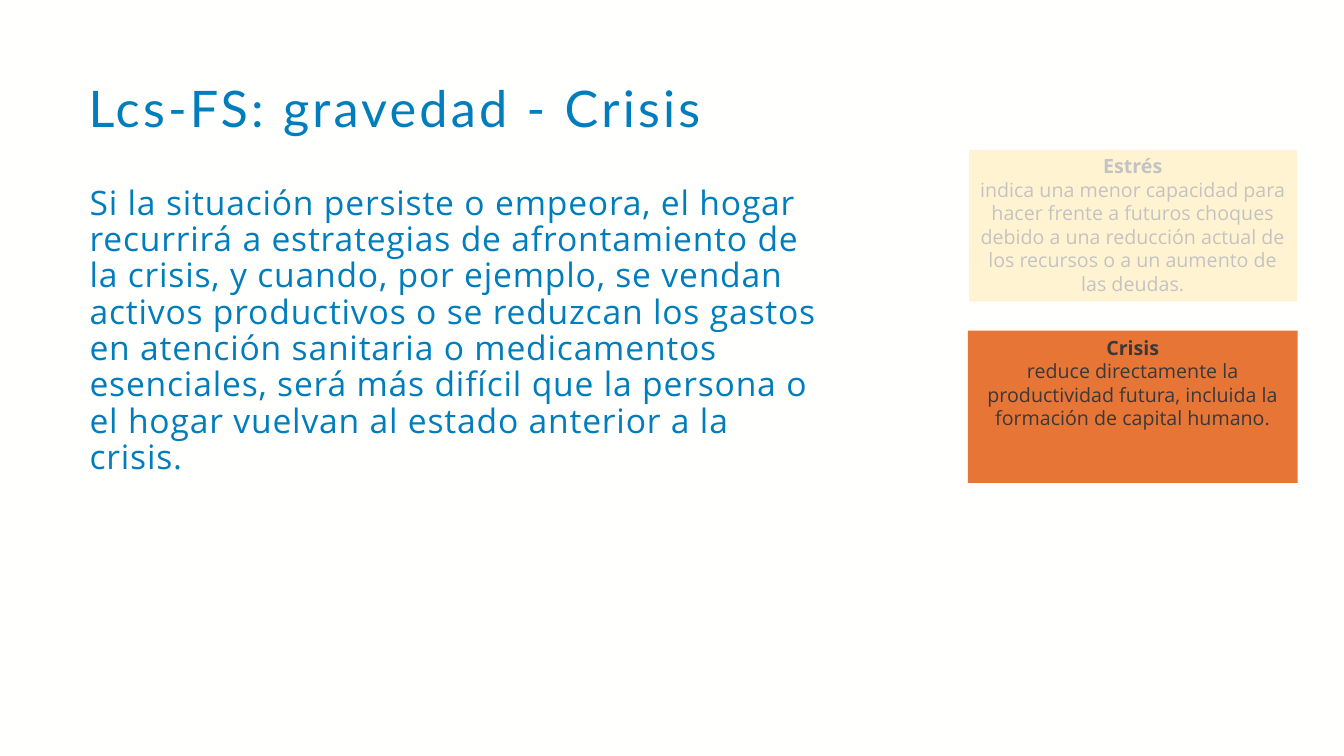
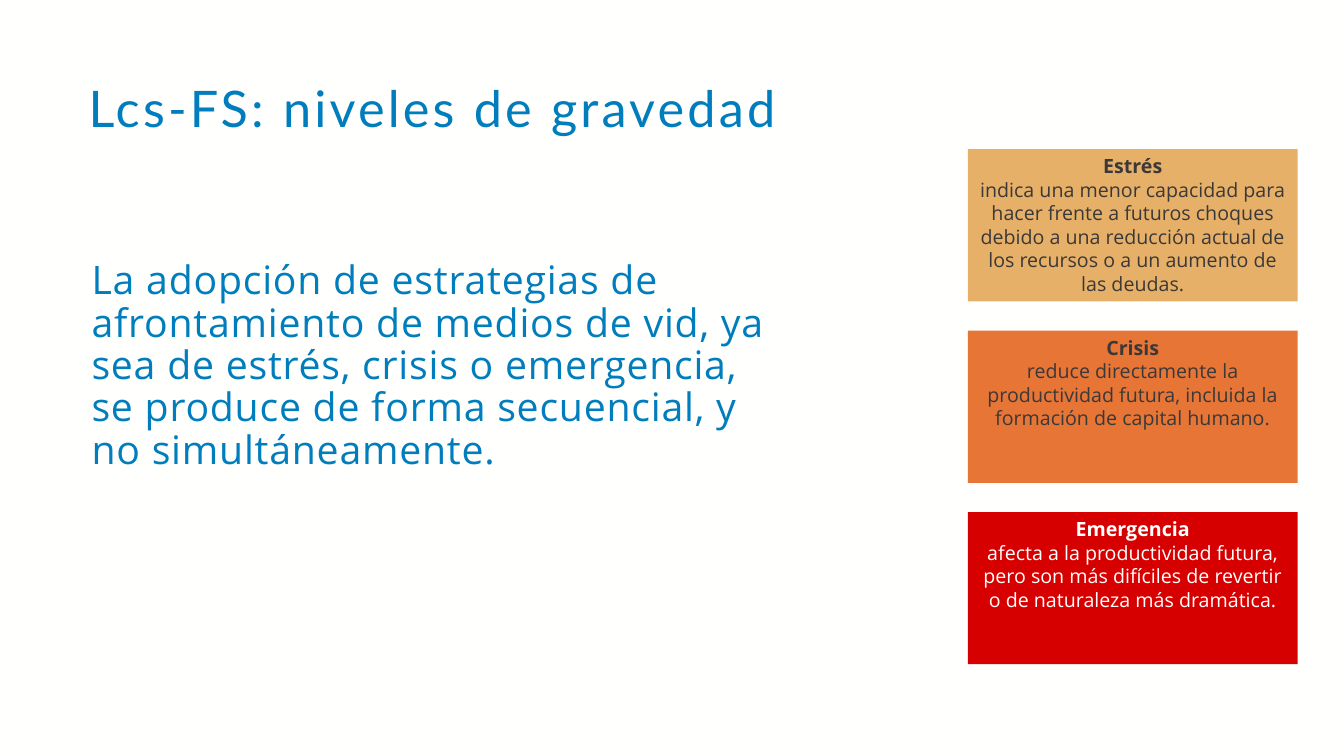
"""Build two slides on the severity levels of livelihood coping strategies."""
import pptx
import pptx.dml.color
import pptx.enum.shapes
import pptx.enum.text
import pptx.oxml
import pptx.oxml.ns
import pptx.util

Inches = pptx.util.Inches
Pt = pptx.util.Pt
RECTANGLE = pptx.enum.shapes.MSO_SHAPE.RECTANGLE
BLUE, DARK, WHITE, PAPER = "007DBC", "3B3838", "FFFFFF", "FFFFFE"
CARD_LEFT, CARD_TOP, CARD_WIDTH, CARD_HEIGHT, CARD_PITCH = 9.6, 1.48, 3.27, 1.51, 1.8

STRESS = ("Estrés", "indica una menor capacidad para hacer frente a futuros choques debido a una "
          "reducción actual de los recursos o a un aumento de las deudas.")
CRISIS = ("Crisis", "reduce directamente la productividad futura, incluida la formación de "
          "capital humano.")
EMERGENCY = ("Emergencia", "afecta a la productividad futura, pero son más difíciles de revertir "
             "o de naturaleza más dramática.")

SLIDES = [
    {"title": "Lcs-FS: gravedad - Crisis",
     "body": "Si la situación persiste o empeora, el hogar recurrirá a estrategias de "
             "afrontamiento de la crisis, y cuando, por ejemplo, se vendan activos productivos o "
             "se reduzcan los gastos en atención sanitaria o medicamentos esenciales, será más "
             "difícil que la persona o el hogar vuelvan al estado anterior a la crisis.",
     "body_box": (0.79, 1.8, 7.44, 4.27), "body_size": 24,
     "cards": [(STRESS, "FFD966", DARK), (CRISIS, "E67536", DARK)], "veil": True},
    {"title": "Lcs-FS: niveles de gravedad",
     "body": "La adopción de estrategias de afrontamiento de medios de vid, ya sea de estrés, "
             "crisis o emergencia, se produce de forma secuencial, y no simultáneamente.",
     "body_box": (0.81, 2.54, 7, 3.53), "body_size": 28,
     "cards": [(STRESS, "E6B068", DARK), (CRISIS, "E67536", DARK),
               (EMERGENCY, "D70000", WHITE)], "veil": False},
]


def color(value):
    """Turn a hex string into a colour."""
    return pptx.dml.color.RGBColor.from_string(value)


def add_text(slide, text, box, font_name, size, tracking):
    """Add a wrapped blue text box with letter spacing in points."""
    text_frame = slide.shapes.add_textbox(*map(Inches, box)).text_frame
    text_frame.word_wrap = True
    text_frame.text = text
    paragraph = text_frame.paragraphs[0]
    paragraph.line_spacing = 0.9
    font = paragraph.runs[0].font
    font.name, font.size = font_name, Pt(size)
    font.color.rgb = color(BLUE)
    paragraph.runs[0]._r.get_or_add_rPr().set("spc", str(round(tracking * 100)))


presentation = pptx.Presentation()
presentation.slide_width = Inches(13.33)
presentation.slide_height = Inches(7.5)
background = presentation.slide_master.background.fill
background.solid()
background.fore_color.rgb = color(PAPER)

for content in SLIDES:
    slide = presentation.slides.add_slide(presentation.slide_layouts[6])
    add_text(slide, content["title"], (0.78, 0.78, 12.09, 0.72), "Lato", 36, 2.3)
    add_text(slide, content["body"], content["body_box"], "Open Sans", content["body_size"], 0.6)

    for index, (level, fill, text_color) in enumerate(content["cards"]):
        card = slide.shapes.add_shape(
            RECTANGLE, Inches(CARD_LEFT), Inches(CARD_TOP + index * CARD_PITCH),
            Inches(CARD_WIDTH), Inches(CARD_HEIGHT))
        card.shadow.inherit = False
        card.fill.solid()
        card.fill.fore_color.rgb = color(fill)
        card.line.fill.background()
        text_frame = card.text_frame
        text_frame.word_wrap = True
        text_frame.vertical_anchor = pptx.enum.text.MSO_ANCHOR.TOP
        text_frame.text = "\n".join(level)
        for row, paragraph in enumerate(text_frame.paragraphs):
            paragraph.alignment = pptx.enum.text.PP_ALIGN.CENTER
            font = paragraph.runs[0].font
            font.name, font.size, font.bold = "Open Sans", Pt(14), row == 0
            font.color.rgb = color(text_color)

    if content["veil"]:
        veil = slide.shapes.add_shape(
            RECTANGLE, Inches(CARD_LEFT), Inches(CARD_TOP),
            Inches(CARD_WIDTH), Inches(1.57))
        veil.shadow.inherit = False
        veil.fill.solid()
        veil.fill.fore_color.rgb = color(WHITE)
        veil.line.color.rgb = color(WHITE)
        veil.line.width = Pt(1)
        fill_color = veil._element.spPr.find(pptx.oxml.ns.qn("a:solidFill"))[0]
        alpha = pptx.oxml.parse_xml(f'<a:alpha {pptx.oxml.ns.nsdecls("a")} val="70000"/>')
        fill_color.append(alpha)

presentation.save("out.pptx")
